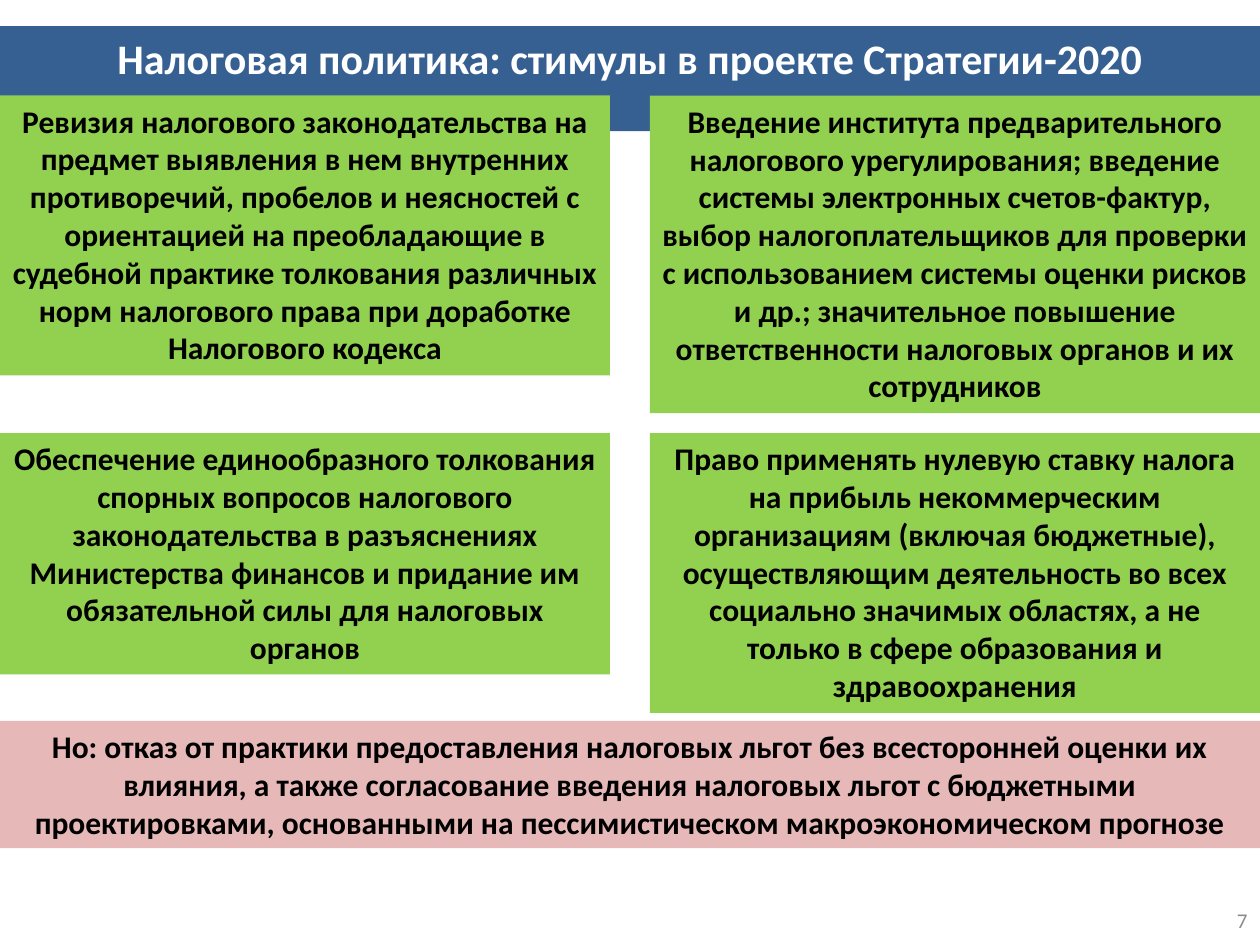
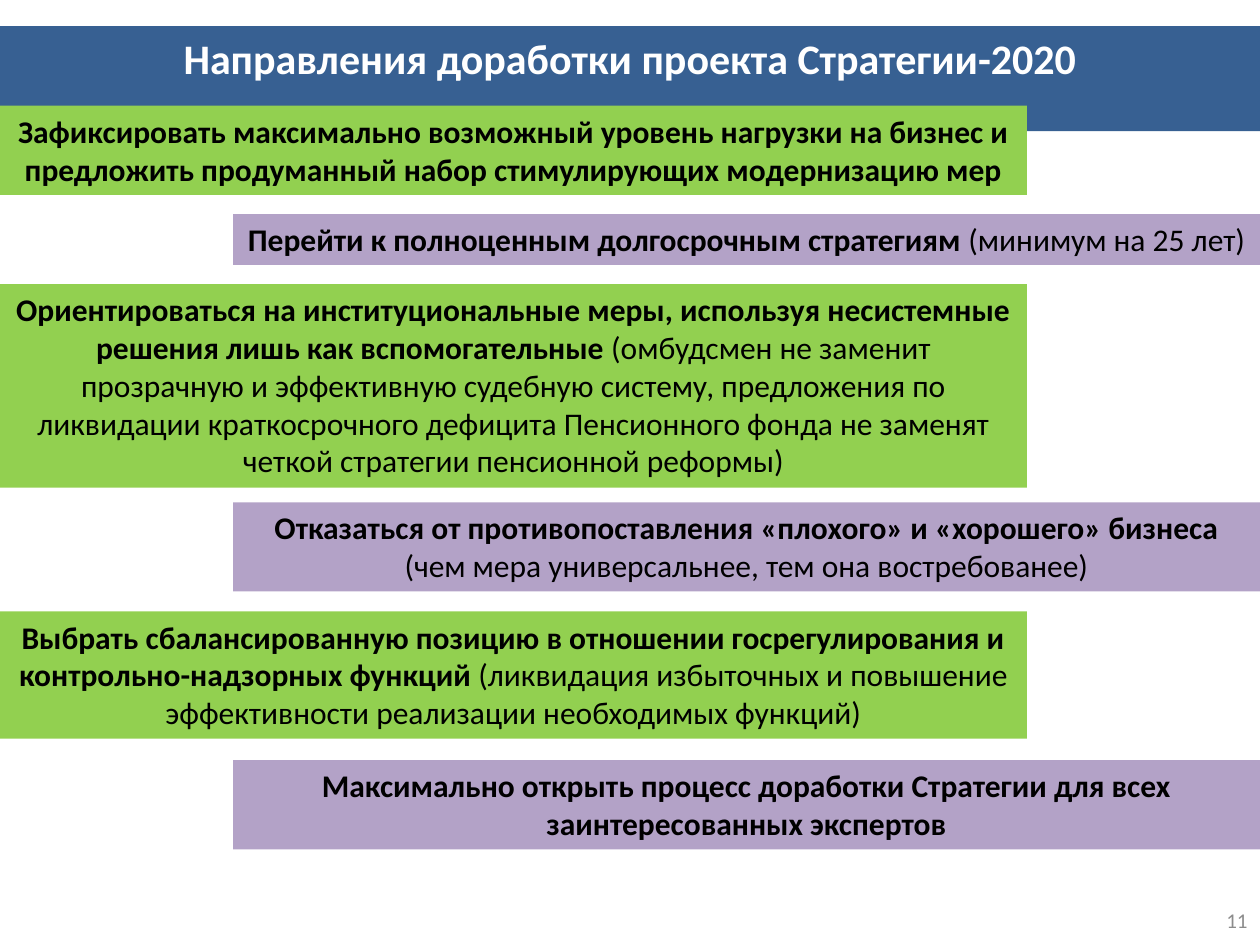
"""Build two slides on tax policy and the revision of the Strategy-2020 draft."""
from pptx import Presentation
from pptx.dml.color import RGBColor
from pptx.enum.shapes import MSO_SHAPE
from pptx.enum.text import MSO_ANCHOR, MSO_AUTO_SIZE, PP_ALIGN
from pptx.util import Pt

WIDTH, HEIGHT = 720, 540
BLUE, GREEN, PINK, PURPLE = "376092", "92D050", "E6B9B8", "B3A2C7"
WHITE, BLACK, GREY = "FFFFFF", "000000", "8C8C8C"


def paint(item, color, solid=False):
    """Colour a fill, or the text of a font."""
    if solid:
        item.solid()
    target = item.fore_color if solid else item.color
    target.rgb = RGBColor.from_string(color)


def add_band(slide, left, top, width, height, color, bold_text, plain_text="", space_after=0):
    """Add a filled band with bold wording and an optional plain remark."""
    band = slide.shapes.add_shape(MSO_SHAPE.RECTANGLE, Pt(left), Pt(top), Pt(width), Pt(height))
    band.shadow.inherit = False
    paint(band.fill, color, solid=True)
    band.line.fill.background()
    frame = band.text_frame
    frame.word_wrap = True
    frame.vertical_anchor = MSO_ANCHOR.TOP
    frame.auto_size = MSO_AUTO_SIZE.SHAPE_TO_FIT_TEXT
    paragraph = frame.paragraphs[0]
    paragraph.alignment = PP_ALIGN.CENTER
    paragraph.space_after = Pt(space_after)
    for wording, bold in ((bold_text, True), (plain_text, False)):
        if wording:
            run = paragraph.add_run()
            run.text = wording
            run.font.name, run.font.size, run.font.bold = "Calibri", Pt(18), bold
            paint(run.font, BLACK)


deck = Presentation()
deck.slide_width, deck.slide_height = Pt(WIDTH), Pt(HEIGHT)

headings = [
    ("Налоговая политика: стимулы в проекте Стратегии-2020", "7"),
    ("Направления доработки проекта Стратегии-2020", "11"),
]
slides = []
for heading, page in headings:
    slide = deck.slides.add_slide(deck.slide_layouts[5])
    slides.append(slide)

    title = slide.shapes.title
    title.left, title.top, title.width, title.height = Pt(0), Pt(14.9), Pt(WIDTH), Pt(36.3)
    paint(title.fill, BLUE, solid=True)
    title.text_frame.text = heading
    title.text_frame.word_wrap = True
    title.text_frame.auto_size = MSO_AUTO_SIZE.SHAPE_TO_FIT_TEXT
    title.text_frame.vertical_anchor = MSO_ANCHOR.TOP
    title_line = title.text_frame.paragraphs[0]
    title_line.alignment = PP_ALIGN.CENTER
    title_font = title_line.runs[0].font
    title_font.name, title_font.size, title_font.bold = "Calibri", Pt(24), True
    paint(title_font, WHITE)

    number = slide.shapes.add_textbox(Pt(WIDTH - 168), Pt(HEIGHT - 28.75), Pt(168), Pt(28.75))
    number.text_frame.text = page
    number.text_frame.word_wrap = True
    number.text_frame.vertical_anchor = MSO_ANCHOR.MIDDLE
    number_line = number.text_frame.paragraphs[0]
    number_line.alignment = PP_ALIGN.RIGHT
    number_font = number_line.runs[0].font
    number_font.name, number_font.size = "Calibri", Pt(12)
    paint(number_font, GREY)

policy, revision = slides

stimulus_width = 348.6
stimulus_rows = [
    (54.6, [
        (160, "Ревизия налогового законодательства на предмет выявления в нем внутренних "
              "противоречий, пробелов и неясностей с ориентацией на преобладающие в судебной "
              "практике толкования различных норм налогового права при доработке Налогового кодекса"),
        (181.5, "Введение института предварительного налогового урегулирования; введение системы "
                "электронных счетов-фактур, выбор налогоплательщиков для проверки с использованием "
                "системы оценки рисков и др.; значительное повышение ответственности налоговых "
                "органов и их сотрудников"),
    ]),
    (247.5, [
        (138, "Обеспечение единообразного толкования спорных вопросов налогового законодательства "
              "в разъяснениях Министерства финансов и придание им обязательной силы для налоговых "
              "органов"),
        (160, "Право применять нулевую ставку налога на прибыль некоммерческим организациям "
              "(включая бюджетные), осуществляющим деятельность во всех социально значимых "
              "областях, а не только в сфере образования и здравоохранения"),
    ]),
]
for top, stimuli in stimulus_rows:
    for left, (height, stimulus) in zip((0, WIDTH - stimulus_width), stimuli):
        add_band(policy, left, top, stimulus_width, height, GREEN, stimulus)
add_band(policy, 0, 412, WIDTH, 72.7, PINK,
         "Но: отказ от практики предоставления налоговых льгот без всесторонней оценки их влияния, "
         "а также согласование введения налоговых льгот с бюджетными проектировками, основанными "
         "на пессимистическом макроэкономическом прогнозе")

direction_width = 586.8
directions = [
    (60.4, 51, 6, "Зафиксировать максимально возможный уровень нагрузки на бизнес и предложить "
                  "продуманный набор стимулирующих модернизацию мер", ""),
    (122.4, 29, 6, "Перейти к полноценным долгосрочным стратегиям ", "(минимум на 25 лет)"),
    (162.3, 116.3, 6, "Ориентироваться на институциональные меры, используя несистемные решения "
                      "лишь как вспомогательные ",
     "(омбудсмен не заменит прозрачную и эффективную судебную систему, предложения по ликвидации "
     "краткосрочного дефицита Пенсионного фонда не заменят четкой стратегии пенсионной реформы)"),
    (287, 51, 6, "Отказаться от противопоставления «плохого» и «хорошего» бизнеса ",
     "(чем мера универсальнее, тем она востребованее)"),
    (349.4, 72.7, 6, "Выбрать сбалансированную позицию в отношении госрегулирования и "
                     "контрольно-надзорных функций ",
     "(ликвидация избыточных и повышение эффективности реализации необходимых функций)"),
    (434.4, 51, 0, "Максимально открыть процесс доработки Стратегии для всех заинтересованных "
                   "экспертов", ""),
]
for index, (top, height, space_after, direction, remark) in enumerate(directions):
    left, color = ((0, GREEN), (WIDTH - direction_width, PURPLE))[index % 2]
    add_band(revision, left, top, direction_width, height, color, direction, remark, space_after)

deck.save("out.pptx")
